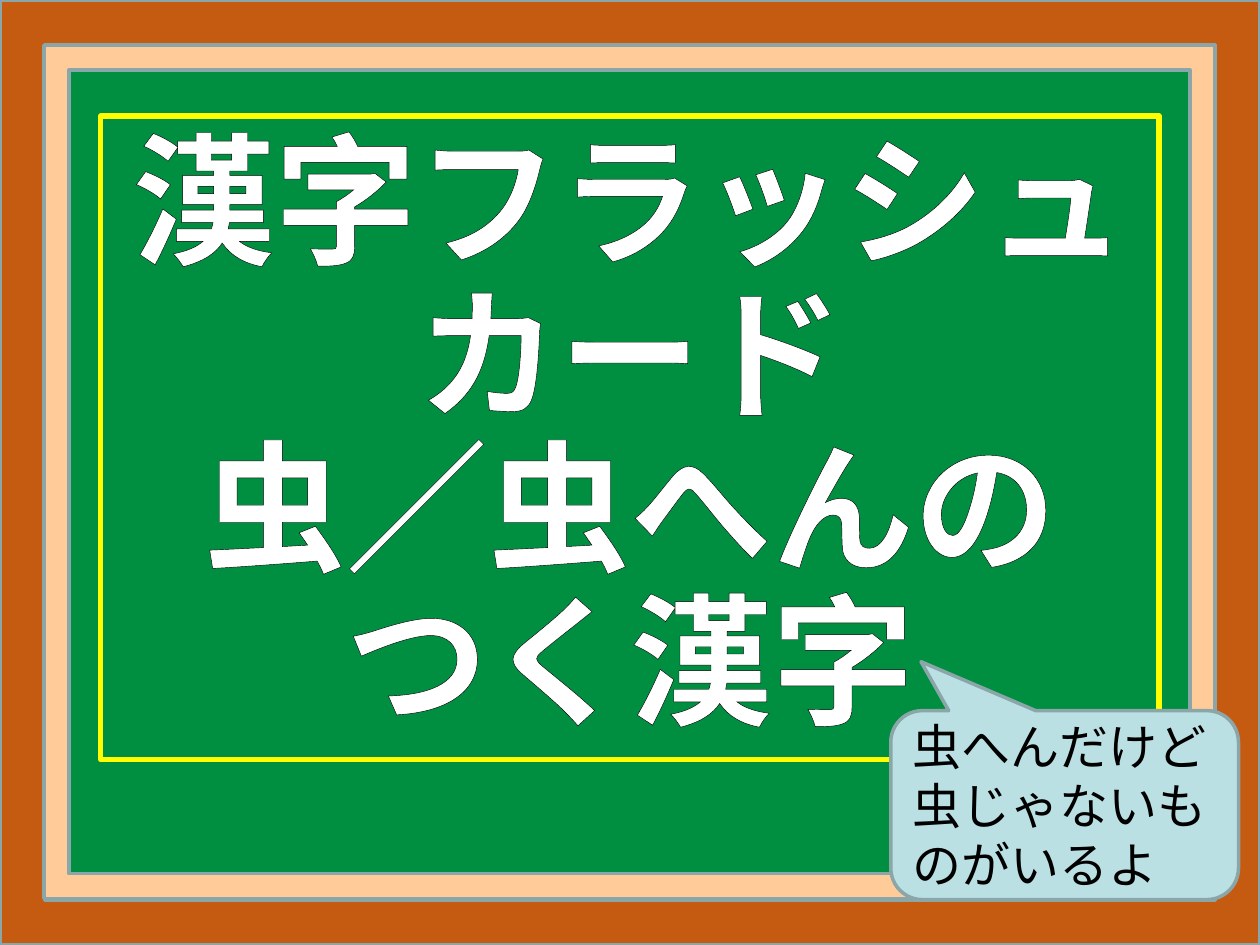
from pptx import Presentation
from pptx.dml.color import RGBColor
from pptx.enum.shapes import MSO_SHAPE as Shape
from pptx.enum.text import MSO_ANCHOR as Anchor, PP_ALIGN as Align
from pptx.oxml import parse_xml
from pptx.oxml.ns import nsdecls
from pptx.util import Pt

COLORS = {
    "board": "008E40", "wood": "C55A11", "trim": "FFCC99", "edge": "8AA6A8",
    "chalk": "FFFFFF", "border": "FFFF00", "bubble": "BBE0E3", "ink": "000000",
}
GOTHIC = "Noto Sans CJK JP"


def color(name):
    return RGBColor.from_string(COLORS[name])


def add_panel(page, kind, box, fill, line, width, adjustments=()):
    panel = page.shapes.add_shape(kind, *map(Pt, box))
    panel.shadow.inherit = False
    if fill:
        panel.fill.solid()
        panel.fill.fore_color.rgb = color(fill)
    else:
        panel.fill.background()
    panel.line.color.rgb = color(line)
    panel.line.width = Pt(width)
    for index, value in enumerate(adjustments):
        panel.adjustments[index] = value
    return panel


def write_text(panel, text, anchor, para_format, font_format, ink):
    frame = panel.text_frame
    frame.word_wrap = True
    frame.vertical_anchor = anchor
    para = frame.paragraphs[0]
    for name, value in para_format.items():
        setattr(para, name, value)
    # Line breaks stay inside the one paragraph
    for number, line in enumerate(text.split("\n")):
        if number:
            para.add_line_break()
        span = para.add_run()
        span.text = line
        for name, value in font_format.items():
            setattr(span.font, name, value)
        span.font.color.rgb = color(ink)
    return para


def style_chalk(para):
    """Give each run a thin outline and the East Asian typeface."""
    for span in para.runs:
        props = span.font._element
        props.insert(0, parse_xml(
            f'<a:ln {nsdecls("a")} w="{Pt(0.75)}"><a:solidFill>'
            f'<a:srgbClr val="{COLORS["ink"]}"/></a:solidFill></a:ln>'))
        props.find(".//{*}latin").addnext(parse_xml(
            f'<a:ea {nsdecls("a")} typeface="{GOTHIC}"/>'))


def add_title(page, box):
    panel = add_panel(page, Shape.RECTANGLE, box, None, "border", 3)
    para = write_text(
        panel, "漢字フラッシュカード\n虫／虫へんの\nつく漢字", Anchor.MIDDLE,
        {"alignment": Align.CENTER, "line_spacing": 0.9},
        {"size": Pt(81.2), "bold": True, "name": GOTHIC}, "chalk")
    style_chalk(para)


def add_board_frame(page, box):
    left, top, width, height = box
    add_panel(page, Shape.FRAME, box, "wood", "edge", 2, [0.047])
    trim = (left + 25.2, top + 25.92, width - 51.12, height - 52.56)
    add_panel(page, Shape.FRAME, trim, "trim", "edge", 2, [0.029])


def add_bubble(page, box):
    panel = add_panel(page, Shape.ROUNDED_RECTANGULAR_CALLOUT, box,
                      "bubble", "edge", 2, [-0.413, -0.759, 0.167])
    write_text(panel, "虫へんだけど虫じゃないものがいるよ", Anchor.MIDDLE,
               {"alignment": Align.LEFT},
               {"size": Pt(28), "name": "Arial"}, "ink")


def main():
    deck = Presentation()
    deck.slide_width, deck.slide_height = Pt(720), Pt(540)
    page = deck.slides.add_slide(deck.slide_layouts[6])
    page.background.fill.solid()
    page.background.fill.fore_color.rgb = color("board")

    add_title(page, (57.6, 66.24, 604.8, 367.92))
    add_board_frame(page, (0, 0, 720, 540))
    add_bubble(page, (509.04, 406.08, 198.72, 108))
    deck.save("out.pptx")


if __name__ == "__main__":
    main()
